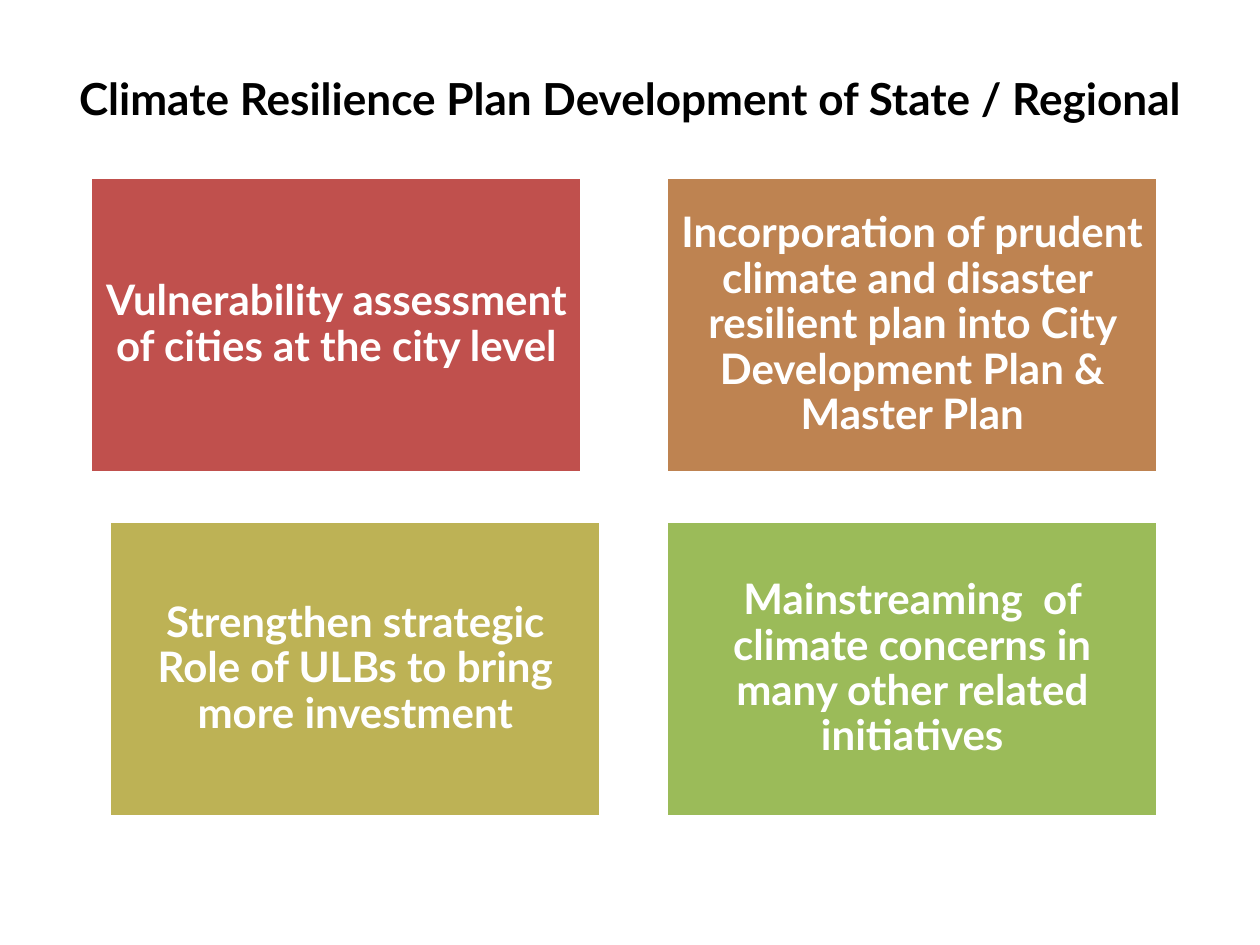
from dataclasses import dataclass

from pptx import Presentation
from pptx.dml.color import RGBColor
from pptx.enum.shapes import MSO_SHAPE as Shape
from pptx.enum.text import MSO_ANCHOR as Anchor, PP_ALIGN as Align
from pptx.util import Inches, Pt


@dataclass(frozen=True)
class Theme:
    font: str = "Lato"
    ink: RGBColor = RGBColor(0x00, 0x00, 0x00)
    paper: RGBColor = RGBColor(0xFF, 0xFF, 0xFF)
    red: RGBColor = RGBColor(0xC0, 0x50, 0x4D)
    brown: RGBColor = RGBColor(0xBE, 0x83, 0x51)
    olive: RGBColor = RGBColor(0xBD, 0xB2, 0x55)
    green: RGBColor = RGBColor(0x9B, 0xBB, 0x59)
    title_size: Pt = Pt(25.2)
    card_size: Pt = Pt(24)
    outline: Pt = Pt(2)


THEME = Theme()
TITLE = "Climate Resilience Plan Development of State / Regional"
# Wording, fill, and shift to the right of the grid column in inches
MEASURES = [
    ("Vulnerability assessment of cities at the city level", THEME.red, 0),
    ("Incorporation of prudent climate and disaster  resilient plan into "
     "City Development Plan & Master Plan", THEME.brown, 0),
    ("Strengthen strategic Role of ULBs to bring more investment",
     THEME.olive, 0.15),
    ("Mainstreaming  of climate concerns in many other related initiatives",
     THEME.green, 0),
]


def write_centred(frame, text, size, color, margin):
    frame.word_wrap = True
    frame.vertical_anchor = Anchor.MIDDLE
    frame.margin_left = frame.margin_right = margin
    frame.margin_top = frame.margin_bottom = margin
    paragraph = frame.paragraphs[0]
    paragraph.alignment = Align.CENTER
    run = paragraph.add_run()
    run.text = text
    run.font.name = THEME.font
    run.font.size = size
    run.font.bold = True
    run.font.color.rgb = color
    return paragraph


def place_title(slide, left, top, width, height):
    title = slide.shapes.title
    title.left, title.top, title.width, title.height = left, top, width, height
    write_centred(title.text_frame, TITLE, THEME.title_size, THEME.ink, 0)


def add_card(slide, text, fill, left, top, width, height):
    card = slide.shapes.add_shape(Shape.RECTANGLE, left, top, width, height)
    card.shadow.inherit = False
    card.fill.solid()
    card.fill.fore_color.rgb = fill
    card.line.color.rgb = THEME.paper
    card.line.width = THEME.outline
    paragraph = write_centred(card.text_frame, text, THEME.card_size,
                              THEME.paper, Inches(0.1))
    paragraph.line_spacing = 0.9


def add_measures(slide, left, top, width, height):
    """Lay the measures out two by two, with cards in the box's corners."""
    card_width, card_height = Inches(3.9), Inches(2.34)
    for index, (text, fill, shift) in enumerate(MEASURES):
        row, column = divmod(index, 2)
        add_card(slide, text, fill,
                 left + column * (width - card_width) + Inches(shift),
                 top + row * (height - card_height),
                 card_width, card_height)


def main():
    deck = Presentation()
    deck.slide_width, deck.slide_height = Inches(10), Inches(7.5)
    slide = deck.slides.add_slide(deck.slide_layouts[5])
    slide.background.fill.solid()
    slide.background.fill.fore_color.rgb = THEME.paper
    place_title(slide, Inches(0.5), Inches(0.3), Inches(9), Inches(0.95))
    add_measures(slide, Inches(0.72), Inches(1.41), Inches(8.47), Inches(5.07))
    deck.save("out.pptx")


if __name__ == "__main__":
    main()
